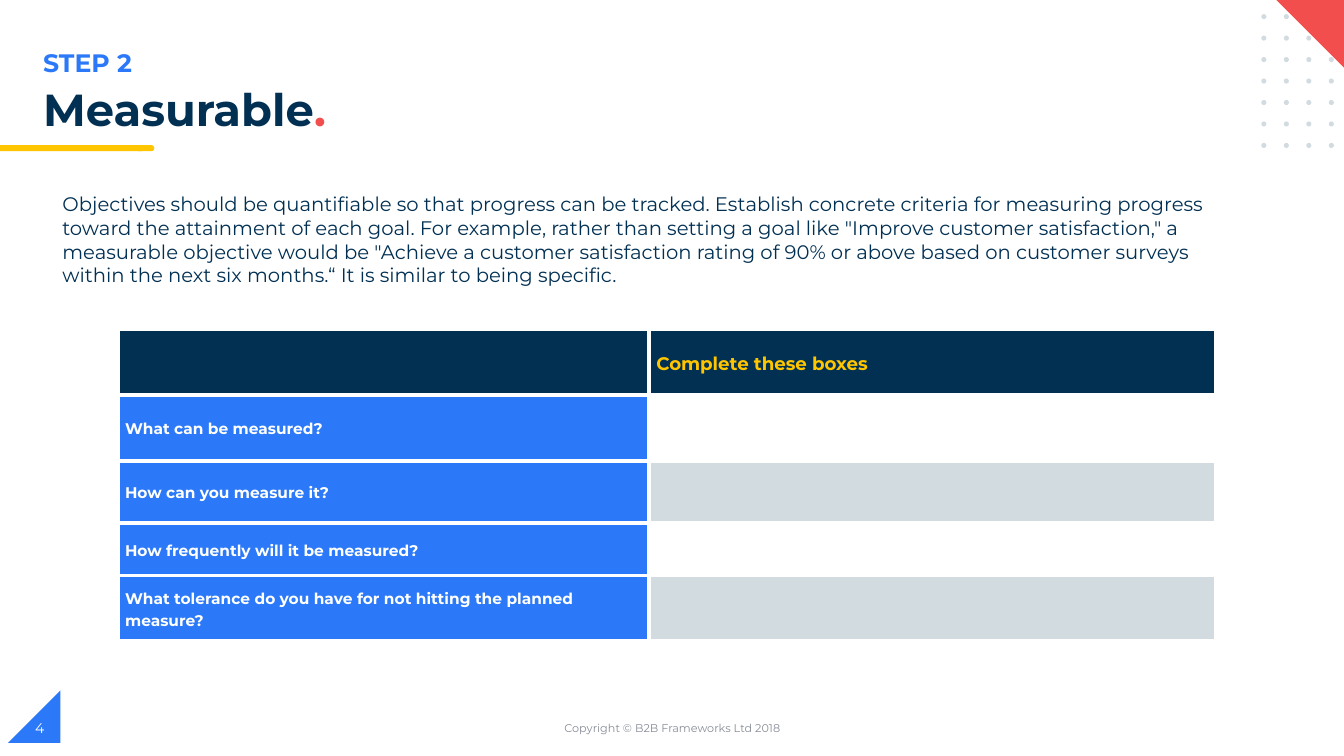
from itertools import product

from lxml.etree import SubElement
from pptx import Presentation
from pptx.dml.color import RGBColor
from pptx.enum.shapes import MSO_SHAPE as Preset
from pptx.enum.text import MSO_ANCHOR as Anchor, PP_ALIGN as Align
from pptx.oxml.ns import qn
from pptx.util import Inches, Pt

NAVY, BLUE, YELLOW, RED = "023053", "2B79F8", "FFC600", "F24E4E"
PALE, GREY, WHITE = "D1DBE0", "888C97", "FFFFFF"

INTRODUCTION = (
    "Objectives should be quantifiable so that progress can be tracked. "
    "Establish concrete criteria for measuring progress toward the attainment of each goal. "
    "For example, rather than setting a goal like \"Improve customer satisfaction,\" "
    "a measurable objective would be \"Achieve a customer satisfaction rating of 90% or above "
    "based on customer surveys within the next six months.“ It is similar to being specific."
)
QUESTIONS = [
    "What can be measured?",
    "How can you measure it?",
    "How frequently will it be measured?",
    "What tolerance do you have for not hitting the planned measure?",
]
COLUMN_WIDTHS = [5.27, 5.62]
ROW_HEIGHTS = [0.65, 0.65, 0.62, 0.52, 0.65]


def color(value):
    return RGBColor.from_string(value)


def style(font, size, fill, bold=False):
    font.name = "Montserrat"
    font.size = Pt(size)
    font.bold = bold
    font.color.rgb = color(fill)


def add_preset(slide, preset, box, fill, rotation=0):
    shape = slide.shapes.add_shape(preset, *map(Inches, box))
    shape.shadow.inherit = False
    shape.fill.solid()
    shape.fill.fore_color.rgb = color(fill)
    shape.line.fill.background()
    shape.rotation = rotation


def add_text(slide, box, text, size, fill, bold=False, anchor=Anchor.TOP, align=Align.LEFT):
    frame = slide.shapes.add_textbox(*map(Inches, box)).text_frame
    frame.word_wrap = True
    frame.vertical_anchor = anchor
    paragraph = frame.paragraphs[0]
    paragraph.text = text
    paragraph.alignment = align
    style(paragraph.font, size, fill, bold)
    return paragraph


def add_heading(slide, left, top, width):
    add_text(slide, (left, top, width, 0.4), "STEP 2", 18, BLUE, True)
    title = add_text(slide, (left, top + 0.4, width, 0.56), "Measurable", 32, NAVY, True)
    title.line_spacing = 0.9
    stop = title.add_run()
    stop.text = "."
    stop.font.color.rgb = color(RED)
    add_preset(slide, Preset.FLOWCHART_TERMINATOR, (1.34, top + 1.02, 0.19, 0.06), YELLOW)
    add_preset(slide, Preset.RECTANGLE, (0, top + 1.02, 1.41, 0.06), YELLOW)


def add_corner(slide, left, top):
    for row, column in product(range(7), range(4)):
        dot = (left + column * 0.223, top + row * 0.213, 0.05, 0.05)
        add_preset(slide, Preset.OVAL, dot, PALE)
    add_preset(slide, Preset.RIGHT_TRIANGLE, (left + 0.14, top - 0.15, 0.72, 0.72), RED, 180)


def add_footer(slide, top):
    add_preset(slide, Preset.RIGHT_TRIANGLE, (0.08, top - 0.17, 0.52, 0.52), BLUE, 270)
    add_text(slide, (4.42, top, 4.5, 0.4), "Copyright © B2B Frameworks Ltd 2018",
             8, GREY, anchor=Anchor.MIDDLE, align=Align.CENTER)
    add_text(slide, (0.25, top, 3, 0.4), "4", 10, WHITE, anchor=Anchor.MIDDLE)


def set_borders(cell, fill, width):
    properties = cell._tc.get_or_add_tcPr()
    for position, side in enumerate(("a:lnL", "a:lnR", "a:lnT", "a:lnB")):
        line = SubElement(properties, qn(side), w=str(Pt(width)))
        SubElement(SubElement(line, qn("a:solidFill")), qn("a:srgbClr"), val=fill)
        properties.insert(position, line)


def fill_cell(cell, fill, text, size, text_fill):
    cell.fill.solid()
    cell.fill.fore_color.rgb = color(fill)
    set_borders(cell, WHITE, 3)
    cell.vertical_anchor = Anchor.MIDDLE
    cell.margin_left = cell.margin_right = Inches(0.07)
    cell.margin_top = cell.margin_bottom = 0
    paragraph = cell.text_frame.paragraphs[0]
    paragraph.text = text
    paragraph.line_spacing = 1.15
    style(paragraph.font, size, text_fill, True)


def add_question_table(slide, left, top):
    box = (left, top, sum(COLUMN_WIDTHS), sum(ROW_HEIGHTS))
    table = slide.shapes.add_table(len(ROW_HEIGHTS), len(COLUMN_WIDTHS), *map(Inches, box)).table
    table.horz_banding = False
    for column, width in zip(table.columns, COLUMN_WIDTHS):
        column.width = Inches(width)
    for row, height in zip(table.rows, ROW_HEIGHTS):
        row.height = Inches(height)
    fill_cell(table.cell(0, 0), NAVY, "", 13, YELLOW)
    fill_cell(table.cell(0, 1), NAVY, "Complete these boxes", 13, YELLOW)
    for row, question in enumerate(QUESTIONS, start=1):
        fill_cell(table.cell(row, 0), BLUE, question, 11, WHITE)
        fill_cell(table.cell(row, 1), WHITE if row % 2 else PALE, "", 11, NAVY)


def main():
    presentation = Presentation()
    presentation.slide_width = Inches(13.33)
    presentation.slide_height = Inches(7.5)
    slide = presentation.slides.add_slide(presentation.slide_layouts[6])
    add_heading(slide, 0.33, 0.42, 11.15)
    add_corner(slide, 12.51, 0.14)
    add_footer(slide, 7.02)
    add_question_table(slide, 1.17, 3.27)
    add_text(slide, (0.52, 1.86, 11.61, 1.04), INTRODUCTION, 14, NAVY)
    presentation.save("out.pptx")


if __name__ == "__main__":
    main()
